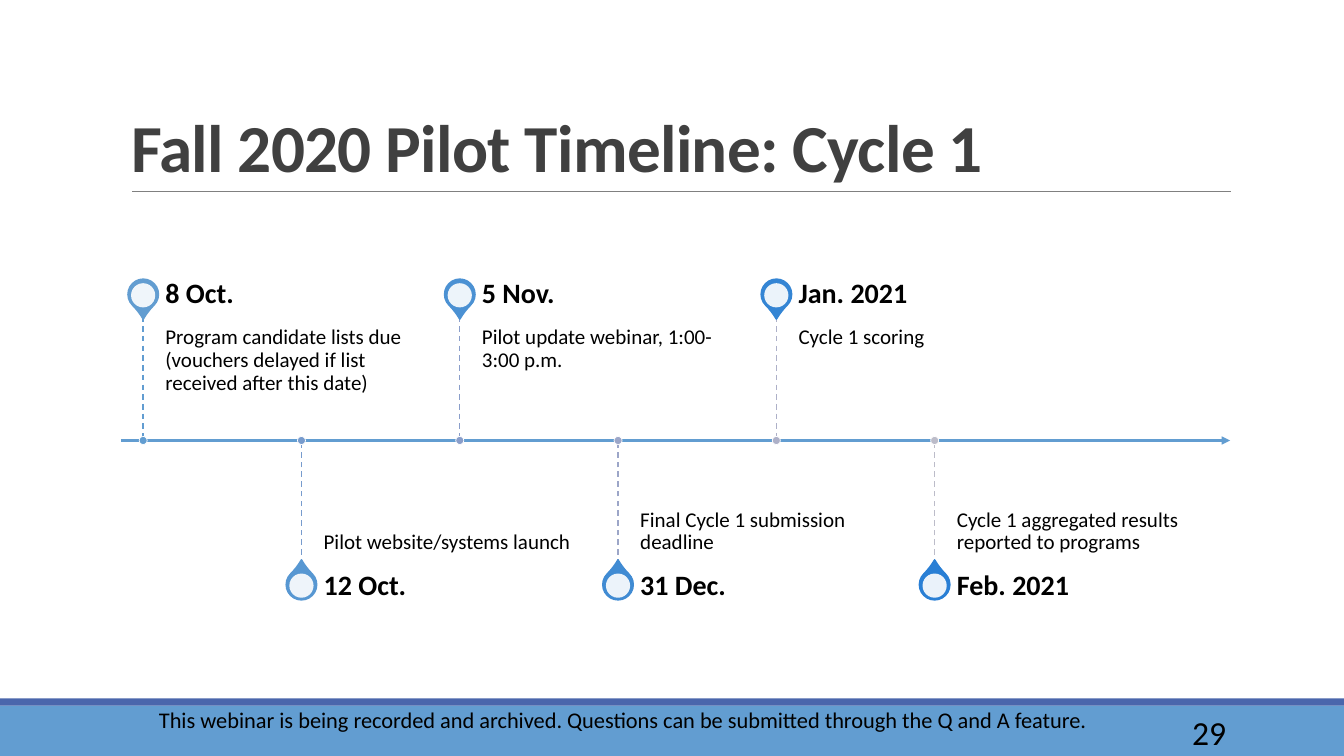
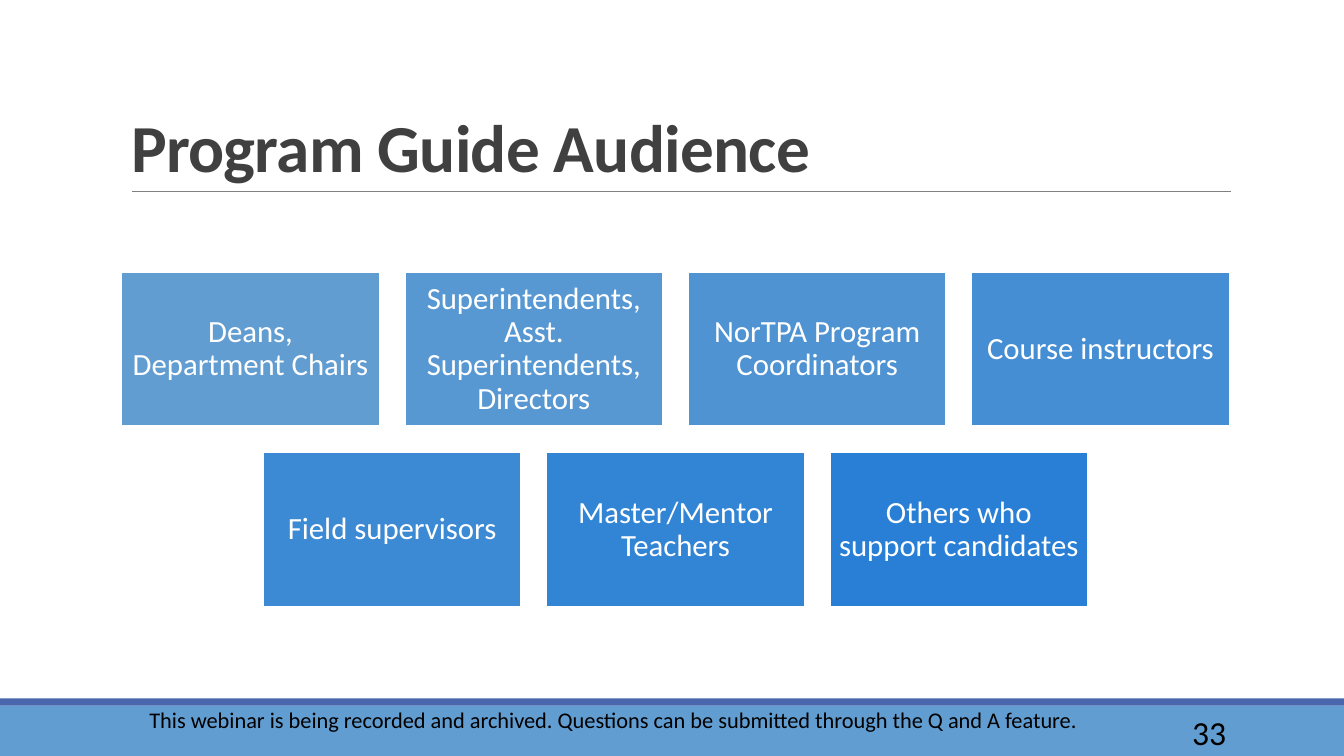
from dataclasses import dataclass

from lxml.etree import SubElement
from pptx import Presentation
from pptx.dml.color import RGBColor
from pptx.enum.dml import MSO_LINE
from pptx.enum.shapes import MSO_CONNECTOR, MSO_SHAPE
from pptx.enum.text import MSO_ANCHOR, MSO_AUTO_SIZE, PP_ALIGN
from pptx.oxml.ns import qn
from pptx.shapes.autoshape import Shape
from pptx.shapes.connector import Connector
from pptx.slide import Slide
from pptx.text.text import TextFrame
from pptx.util import Inches, Pt

FONT = "Calibri"
BLACK, WHITE, TITLE_GRAY, RULE_GRAY = "000000", "FFFFFF", "404040", "808080"
LIGHT_BLUE, BAND_BLUE, STRONG_BLUE = "629DD1", "4A66AC", "297FD5"
FOOTER = (
    "This webinar is being recorded and archived. "
    "Questions can be submitted through the Q and A feature."
)

AXIS_TOP = 4.37
STEM_LENGTH = 1.23
FIRST_STEM, STEM_STEP = 1.42, 1.57
LABEL_OFFSET, LABEL_WIDTH, LABEL_HEIGHT = 0.22, 2.61, 0.43
PIN_SIZE, PIN_HOLE, DOT_SIZE = 0.3, 0.24, 0.08

CARD_WIDTH, CARD_HEIGHT = 2.56, 1.53
CARD_STEP_X, CARD_STEP_Y = 2.81, 1.79
CARDS_TOP, CARDS_CENTER = 2.7, 6.7


@dataclass(frozen=True)
class Box:
    left: float
    top: float
    width: float
    height: float

    def lengths(self) -> tuple[int, int, int, int]:
        return (Inches(self.left), Inches(self.top),
                Inches(self.width), Inches(self.height))


@dataclass(frozen=True)
class TextStyle:
    size: float
    color: str = BLACK
    bold: bool = False
    align: PP_ALIGN = PP_ALIGN.LEFT
    anchor: MSO_ANCHOR = MSO_ANCHOR.MIDDLE
    line_spacing: float = 1.0
    insets: tuple[float, float, float, float] = (0.1, 0.05, 0.1, 0.05)


@dataclass(frozen=True)
class Milestone:
    date: str
    event: str
    stem_color: str


TITLE_STYLE = TextStyle(48, TITLE_GRAY, bold=True, anchor=MSO_ANCHOR.BOTTOM,
                        line_spacing=0.85)
NUMBER_STYLE = TextStyle(24, align=PP_ALIGN.RIGHT)
FOOTER_STYLE = TextStyle(16, align=PP_ALIGN.CENTER)
DATE_STYLE = TextStyle(20, bold=True, line_spacing=0.9, insets=(0, 0, 0.14, 0))
EVENT_ABOVE_STYLE = TextStyle(15, anchor=MSO_ANCHOR.TOP, line_spacing=0.9,
                              insets=(0, 0.1, 0.1, 0.16))
EVENT_BELOW_STYLE = TextStyle(15, anchor=MSO_ANCHOR.BOTTOM, line_spacing=0.9,
                              insets=(0, 0.16, 0, 0.1))
CARD_STYLE = TextStyle(22, WHITE, align=PP_ALIGN.CENTER, line_spacing=0.9,
                       insets=(0.09, 0.09, 0.09, 0.09))

MILESTONES = [
    Milestone("8 Oct.", "Program candidate lists due (vouchers delayed if list "
              "received after this date)", "629DD1"),
    Milestone("12 Oct.", "Pilot website/systems launch", "779BCD"),
    Milestone("5 Nov.", "Pilot update webinar, 1:00-3:00 p.m.", "8A9ECA"),
    Milestone("31 Dec.", "Final Cycle 1 submission deadline", "9CA6C8"),
    Milestone("Jan. 2021", "Cycle 1 scoring", "ADB0C8"),
    Milestone("Feb. 2021", "Cycle 1 aggregated results reported to programs",
              "BCBCC9"),
]
AUDIENCE_ROWS = [
    ["Deans, Department Chairs",
     "Superintendents, Asst. Superintendents, Directors",
     "NorTPA Program Coordinators",
     "Course instructors"],
    ["Field supervisors", "Master/Mentor Teachers",
     "Others who support candidates"],
]


def rgb(color: str) -> RGBColor:
    return RGBColor.from_string(color)


def blue_steps(count: int) -> list[str]:
    """Return evenly spaced colours from the light to the strong blue."""
    start, end = rgb(LIGHT_BLUE), rgb(STRONG_BLUE)
    return [
        "".join(f"{round(a + (b - a) * step / (count - 1)):02X}"
                for a, b in zip(start, end))
        for step in range(count)
    ]


def write_text(frame: TextFrame, text: str, style: TextStyle) -> None:
    left, top, right, bottom = style.insets
    frame.text = text
    paragraph = frame.paragraphs[0]
    font = paragraph.runs[0].font
    formats = {
        frame: {
            "word_wrap": True, "auto_size": MSO_AUTO_SIZE.NONE,
            "vertical_anchor": style.anchor,
            "margin_left": Inches(left), "margin_top": Inches(top),
            "margin_right": Inches(right), "margin_bottom": Inches(bottom),
        },
        paragraph: {"alignment": style.align,
                    "line_spacing": style.line_spacing},
        font: {"name": FONT, "size": Pt(style.size), "bold": style.bold},
    }
    for target, values in formats.items():
        for name, value in values.items():
            setattr(target, name, value)
    font.color.rgb = rgb(style.color)


def add_text(slide: Slide, box: Box, text: str, style: TextStyle) -> None:
    write_text(slide.shapes.add_textbox(*box.lengths()).text_frame, text, style)


def add_filled(slide: Slide, kind: MSO_SHAPE, box: Box, fill: str,
               line: str | None = None, width: float = 1.25) -> Shape:
    shape = slide.shapes.add_shape(kind, *box.lengths())
    shape.shadow.inherit = False
    shape.fill.solid()
    shape.fill.fore_color.rgb = rgb(fill)
    if line is None:
        shape.line.fill.background()
    else:
        shape.line.color.rgb = rgb(line)
        shape.line.width = Pt(width)
    return shape


def add_line(slide: Slide, start: tuple[float, float], end: tuple[float, float],
             color: str, width: float) -> Connector:
    connector = slide.shapes.add_connector(
        MSO_CONNECTOR.STRAIGHT, *(Inches(value) for value in (*start, *end)))
    connector.line.color.rgb = rgb(color)
    connector.line.width = Pt(width)
    SubElement(connector._element.spPr, qn("a:effectLst"))
    return connector


def centered_box(x: float, y: float, size: float) -> Box:
    return Box(x - size / 2, y - size / 2, size, size)


def add_framed_slide(presentation: Presentation, title: str, number: str,
                     footer_box: Box) -> Slide:
    """Add a slide with the shared bands, title, rule, footer and number."""
    slide = presentation.slides.add_slide(presentation.slide_layouts[5])
    add_filled(slide, MSO_SHAPE.RECTANGLE, Box(0, 7, 13.33, 0.5), LIGHT_BLUE)
    add_filled(slide, MSO_SHAPE.RECTANGLE, Box(0, 6.93, 13.33, 0.07), BAND_BLUE)
    add_line(slide, (1.31, 1.9), (12.21, 1.9), RULE_GRAY, 0.5)

    heading = slide.shapes.title
    heading.left, heading.top, heading.width, heading.height = Box(
        1.2, 0.31, 11, 1.59).lengths()
    write_text(heading.text_frame, title, TITLE_STYLE)
    run = heading.text_frame.paragraphs[0].runs[0]
    run._r.get_or_add_rPr().set("spc", "-50")

    add_text(slide, Box(10.83, 7.06, 1.43, 0.4), number, NUMBER_STYLE)
    add_text(slide, footer_box, FOOTER, FOOTER_STYLE)
    return slide


def add_pin(slide: Slide, x: float, y: float, rotation: int, color: str) -> None:
    pin = add_filled(slide, MSO_SHAPE.TEAR, centered_box(x, y, PIN_SIZE),
                     color, color)
    pin.adjustments[0] = 1.15
    pin.rotation = rotation
    hole = add_filled(slide, MSO_SHAPE.OVAL,
                      centered_box(x, y + 0.01, PIN_HOLE), WHITE)
    solid_color = hole._element.spPr.find(qn("a:solidFill"))[0]
    SubElement(solid_color, qn("a:alpha"), val="90000")


def add_milestone(slide: Slide, index: int, milestone: Milestone,
                  color: str) -> None:
    """Draw one milestone; even ones stand above the axis, odd ones below."""
    above = index % 2 == 0
    x = FIRST_STEM + index * STEM_STEP
    label_left = x + LABEL_OFFSET
    if above:
        stem_end = AXIS_TOP - STEM_LENGTH
        event_top, date_top = stem_end, stem_end - LABEL_HEIGHT
        pin_y, rotation, event_style = stem_end - 0.22, 135, EVENT_ABOVE_STYLE
    else:
        stem_end = AXIS_TOP + STEM_LENGTH
        event_top, date_top = AXIS_TOP, stem_end
        pin_y, rotation, event_style = stem_end + 0.2, 315, EVENT_BELOW_STYLE

    stem = add_line(slide, (x, stem_end), (x, AXIS_TOP), milestone.stem_color, 1)
    stem.line.dash_style = MSO_LINE.DASH
    add_pin(slide, x, pin_y, rotation, color)
    add_filled(slide, MSO_SHAPE.OVAL, centered_box(x, AXIS_TOP, DOT_SIZE),
               milestone.stem_color, WHITE, 0.5)
    add_text(slide, Box(label_left, event_top, LABEL_WIDTH, STEM_LENGTH),
             milestone.event, event_style)
    add_text(slide, Box(label_left, date_top, LABEL_WIDTH, LABEL_HEIGHT),
             milestone.date, DATE_STYLE)


def build_timeline(presentation: Presentation) -> None:
    slide = add_framed_slide(presentation, "Fall 2020 Pilot Timeline: Cycle 1",
                             "29", Box(1.2, 6.94, 9.96, 0.4))
    axis = add_line(slide, (1.2, AXIS_TOP), (12.2, AXIS_TOP), LIGHT_BLUE, 1.5)
    SubElement(axis.line._get_or_add_ln(), qn("a:tailEnd"), type="triangle")
    colors = blue_steps(len(MILESTONES))
    for index, (milestone, color) in enumerate(zip(MILESTONES, colors)):
        add_milestone(slide, index, milestone, color)


def build_audience(presentation: Presentation) -> None:
    slide = add_framed_slide(presentation, "Program Guide Audience",
                             "33", Box(1.07, 6.94, 10.03, 0.4))
    colors = iter(blue_steps(sum(len(row) for row in AUDIENCE_ROWS)))
    for row_index, row in enumerate(AUDIENCE_ROWS):
        row_width = (len(row) - 1) * CARD_STEP_X + CARD_WIDTH
        row_left = CARDS_CENTER - row_width / 2
        top = CARDS_TOP + row_index * CARD_STEP_Y
        for column, audience in enumerate(row):
            box = Box(row_left + column * CARD_STEP_X, top,
                      CARD_WIDTH, CARD_HEIGHT)
            card = add_filled(slide, MSO_SHAPE.RECTANGLE, box, next(colors), WHITE)
            write_text(card.text_frame, audience, CARD_STYLE)


def main() -> None:
    presentation = Presentation()
    presentation.slide_width = Inches(13.33)
    presentation.slide_height = Inches(7.5)
    build_timeline(presentation)
    build_audience(presentation)
    presentation.save("out.pptx")


if __name__ == "__main__":
    main()
